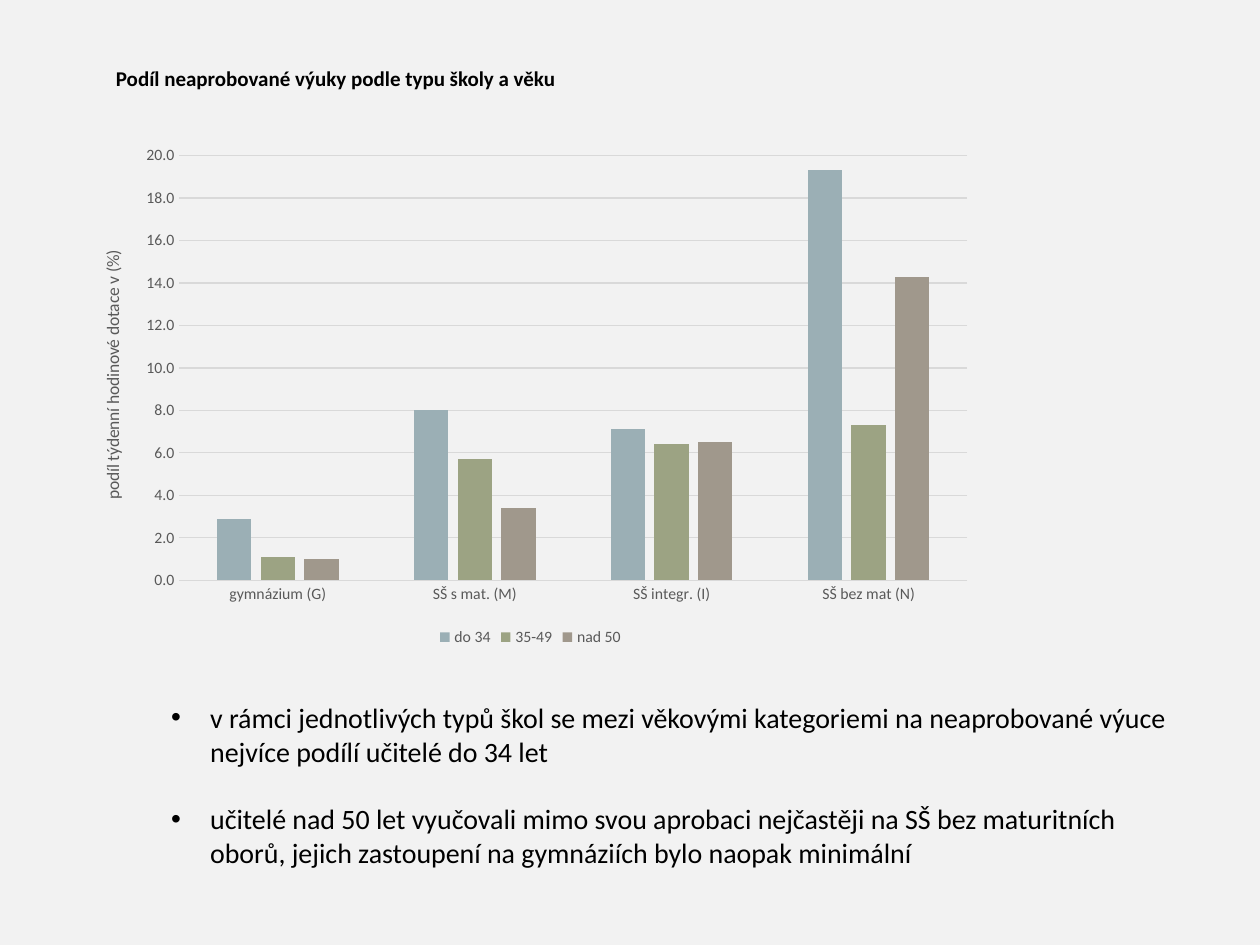
from lxml.etree import SubElement
from pptx import Presentation
from pptx.chart.data import CategoryChartData
from pptx.dml.color import RGBColor
from pptx.enum.chart import XL_CHART_TYPE, XL_LEGEND_POSITION, XL_TICK_MARK
from pptx.enum.text import MSO_ANCHOR, MSO_AUTO_SIZE, PP_ALIGN
from pptx.oxml.ns import qn
from pptx.util import Inches, Pt

FONT = "Calibri"
COLORS = {"background": "F2F2F2", "text": "000000", "label": "595959", "grid": "D9D9D9"}
CATEGORIES = ["gymnázium (G)", "SŠ s mat. (M)", "SŠ integr. (I)", "SŠ bez mat (N)"]
AGE_GROUPS = [
    ("do 34", [2.9, 8, 7.1, 19.3], "9BAFB5"),
    ("35-49", [1.1, 5.7, 6.4, 7.3], "9CA383"),
    ("nad 50", [1, 3.4, 6.5, 14.3], "A0988C"),
]
FINDINGS = [
    "v rámci jednotlivých typů škol se mezi věkovými kategoriemi na neaprobované výuce "
    "nejvíce podílí učitelé do 34 let",
    "učitelé nad 50 let vyučovali mimo svou aprobaci nejčastěji na SŠ bez maturitních oborů, "
    "jejich zastoupení na gymnáziích bylo naopak minimální",
]


def style_font(font, size, color="text", bold=False):
    """Set the typeface, size, colour and weight of a font."""
    font.name = FONT
    font.size = Pt(size)
    font.bold = bold
    font.color.rgb = RGBColor.from_string(COLORS[color])


def write_text(para, text, **style):
    """Add a left-aligned, formatted span of text to a paragraph."""
    para.alignment = PP_ALIGN.LEFT
    span = para.add_run()
    span.text = text
    style_font(span.font, **style)


def style_line(line):
    """Give a chart line the thin grid style."""
    line.color.rgb = RGBColor.from_string(COLORS["grid"])
    line.width = Pt(0.75)


def place_title(page, left, top, width, height):
    """Move the title placeholder and write the heading."""
    title = page.shapes.title
    title.left, title.top, title.width, title.height = left, top, width, height
    frame = title.text_frame
    frame.word_wrap = True
    frame.auto_size = MSO_AUTO_SIZE.NONE
    frame.vertical_anchor = MSO_ANCHOR.TOP
    write_text(frame.paragraphs[0], "Podíl neaprobované výuky podle typu školy a věku",
               size=12, bold=True)


def style_axes(chart):
    """Format both axes, the gridlines and the value axis title."""
    for axis in (chart.category_axis, chart.value_axis):
        axis.major_tick_mark = XL_TICK_MARK.NONE
        axis.minor_tick_mark = XL_TICK_MARK.NONE
        style_font(axis.tick_labels.font, size=9, color="label")
    style_line(chart.category_axis.format.line)
    values = chart.value_axis
    values.minimum_scale, values.maximum_scale, values.major_unit = 0, 20, 2
    values.format.line.fill.background()
    style_line(values.major_gridlines.format.line)
    values.tick_labels.number_format = "0.0"
    values.tick_labels.number_format_is_linked = False
    write_text(values.axis_title.text_frame.paragraphs[0],
               "podíl týdenní hodinové dotace v (%)", size=10, color="label")


def place_chart(page, left, top, width, height):
    """Add the clustered columns by school type and age group."""
    data = CategoryChartData(number_format="0.0")
    data.categories = CATEGORIES
    for name, shares, _ in AGE_GROUPS:
        data.add_series(name, shares)
    chart = page.shapes.add_chart(
        XL_CHART_TYPE.COLUMN_CLUSTERED, left, top, width, height, data).chart
    style_font(chart.font, size=10)
    chart.has_title = False
    chart.has_legend = True
    chart.legend.position = XL_LEGEND_POSITION.BOTTOM
    chart.legend.include_in_layout = False
    style_font(chart.legend.font, size=9, color="label")
    style_axes(chart)
    plot = chart.plots[0]
    plot.vary_by_categories = False
    plot.gap_width, plot.overlap = 219, -27
    for series, (_, _, color) in zip(plot.series, AGE_GROUPS):
        series.format.fill.solid()
        series.format.fill.fore_color.rgb = RGBColor.from_string(color)


def place_findings(page, left, top, width, height):
    """Add the bulleted findings."""
    frame = page.shapes.add_textbox(left, top, width, height).text_frame
    frame.word_wrap = True
    for index, finding in enumerate(FINDINGS):
        para = frame.add_paragraph() if index else frame.paragraphs[0]
        para.space_before = Pt(19.5 if index else 0)
        write_text(para, finding, size=16)
        properties = para._p.get_or_add_pPr()
        properties.set("marL", str(Inches(0.31)))
        properties.set("indent", str(-Inches(0.31)))
        SubElement(properties, qn("a:buFont"), typeface="Arial")
        SubElement(properties, qn("a:buChar"), char="•")


def main():
    """Build the slide and save the deck."""
    deck = Presentation()
    deck.slide_width, deck.slide_height = Inches(10), Inches(7.5)
    page = deck.slides.add_slide(deck.slide_layouts[5])
    page.background.fill.solid()
    page.background.fill.fore_color.rgb = RGBColor.from_string(COLORS["background"])
    place_chart(page, Inches(0.6), Inches(1.08), Inches(7.22), Inches(4.09))
    place_title(page, Inches(0.82), Inches(0.47), Inches(6.08), Inches(0.3))
    place_findings(page, Inches(1.26), Inches(5.51), Inches(8.33), Inches(1.45))
    deck.save("out.pptx")


if __name__ == "__main__":
    main()
